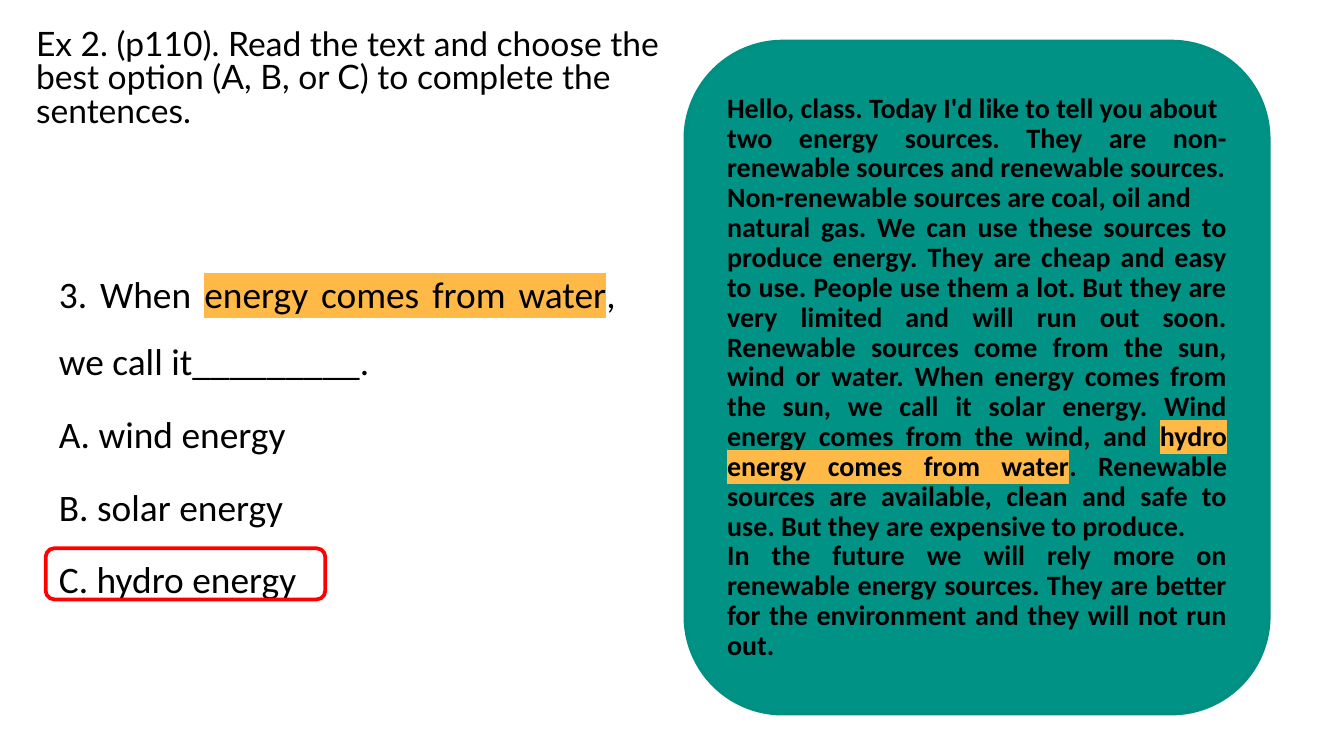
from lxml import etree
from pptx import Presentation
from pptx.dml.color import RGBColor
from pptx.enum.shapes import MSO_SHAPE
from pptx.enum.text import MSO_ANCHOR, PP_ALIGN
from pptx.oxml.ns import qn
from pptx.util import Inches, Pt

ROUND = MSO_SHAPE.ROUNDED_RECTANGLE
MIDDLE = MSO_ANCHOR.MIDDLE
LEFT, JUSTIFY = PP_ALIGN.LEFT, PP_ALIGN.JUSTIFY

THEME = {
    "ink": "000000", "mark": "FFB947", "halo": "FFFFFF",
    "panel": "009285", "edge": "009083", "answer": "FF0000",
    "title": {"font": "Lato", "size": 18, "bold": False, "halo": True,
              "align": LEFT, "lead": Pt(18), "before": 0},
    "passage": {"font": "Calibri", "size": 15, "bold": True, "halo": False,
                "align": JUSTIFY, "lead": Pt(16), "before": 0},
    "quiz": {"font": "Calibri", "size": 20, "bold": False, "halo": False,
             "align": JUSTIFY, "lead": 1.5, "before": 3},
}

TITLE = [["Ex 2. (p110). Read the text and choose the best option (A, B, or C) "
          "to complete the sentences."]]

PASSAGE = [
    ["Hello, class. Today I'd like to tell you about"],
    ["two energy sources. They are non-renewable sources and renewable sources."],
    ["Non-renewable sources are coal, oil and "],
    ["natural gas. We can use these sources to produce energy. They are cheap "
     "and easy to use. People use them a lot. But they are very limited and "
     "will run out soon. Renewable sources come from the sun, wind or water. "
     "When energy comes from the sun, we call it solar energy. Wind energy "
     "comes from the wind, and ",
     ("hydro",), " ", ("energy comes from water",),
     ". Renewable sources are available, clean and safe to use. "
     "But they are expensive to produce."],
    ["In the future we will rely more on renewable energy sources. They are "
     "better for the environment and they will not run out."],
]

QUIZ = [
    ["3. When ", ("energy comes from water",), ", we call it_________."],
    ["A. wind energy"],
    ["B. solar energy"],
    ["C. hydro energy"],
]

PANEL_BOX = (5.1, 0.31, 4.34, 5)
TITLE_BOX = (0.17, 0.17, 4.93, 0.86)
QUIZ_BOX = (0.34, 1.8, 4.34, 3.25)
ANSWER_BOX = (0.34, 4.08, 2.08, 0.38)


def color(name):
    return RGBColor.from_string(THEME[name])


def add_color(node, name):
    etree.SubElement(node, qn("a:srgbClr"), val=THEME[name])


def add_run(para, text, style, marked):
    run = para.add_run()
    run.text = text
    font = run.font
    font.size = Pt(style["size"])
    font.bold = style["bold"]
    font.color.rgb = color("ink")
    props = run._r.get_or_add_rPr()
    if style["halo"]:
        line = etree.Element(qn("a:ln"), w=str(Pt(0.75)))
        add_color(etree.SubElement(line, qn("a:solidFill")), "halo")
        props.insert(0, line)
    if marked:
        add_color(etree.SubElement(props, qn("a:highlight")), "mark")
    font.name = style["font"]


def write(frame, paras, style):
    frame.word_wrap = True
    for i, parts in enumerate(paras):
        para = frame.add_paragraph() if i else frame.paragraphs[0]
        para.alignment = style["align"]
        para.line_spacing = style["lead"]
        para.space_before = Pt(style["before"])
        for part in parts:
            marked = isinstance(part, tuple)
            add_run(para, part[0] if marked else part, style, marked)


def add_round(slide, box, edge, fill=None):
    shape = slide.shapes.add_shape(ROUND, *map(Inches, box))
    shape.shadow.inherit = False
    if fill:
        shape.fill.solid()
        shape.fill.fore_color.rgb = color(fill)
    else:
        shape.fill.background()
    shape.line.color.rgb = color(edge)
    shape.line.width = Pt(2)
    return shape


def add_text(slide, box, paras, style):
    frame = slide.shapes.add_textbox(*map(Inches, box)).text_frame
    write(frame, paras, style)


def main():
    deck = Presentation()
    deck.slide_width = Inches(10)
    deck.slide_height = Inches(10 * 9 / 16)
    slide = deck.slides.add_slide(deck.slide_layouts[6])
    panel = add_round(slide, PANEL_BOX, "edge", "panel")
    panel.text_frame.vertical_anchor = MIDDLE
    write(panel.text_frame, PASSAGE, THEME["passage"])
    add_text(slide, TITLE_BOX, TITLE, THEME["title"])
    add_text(slide, QUIZ_BOX, QUIZ, THEME["quiz"])
    add_round(slide, ANSWER_BOX, "answer")
    deck.save("out.pptx")


if __name__ == "__main__":
    main()
